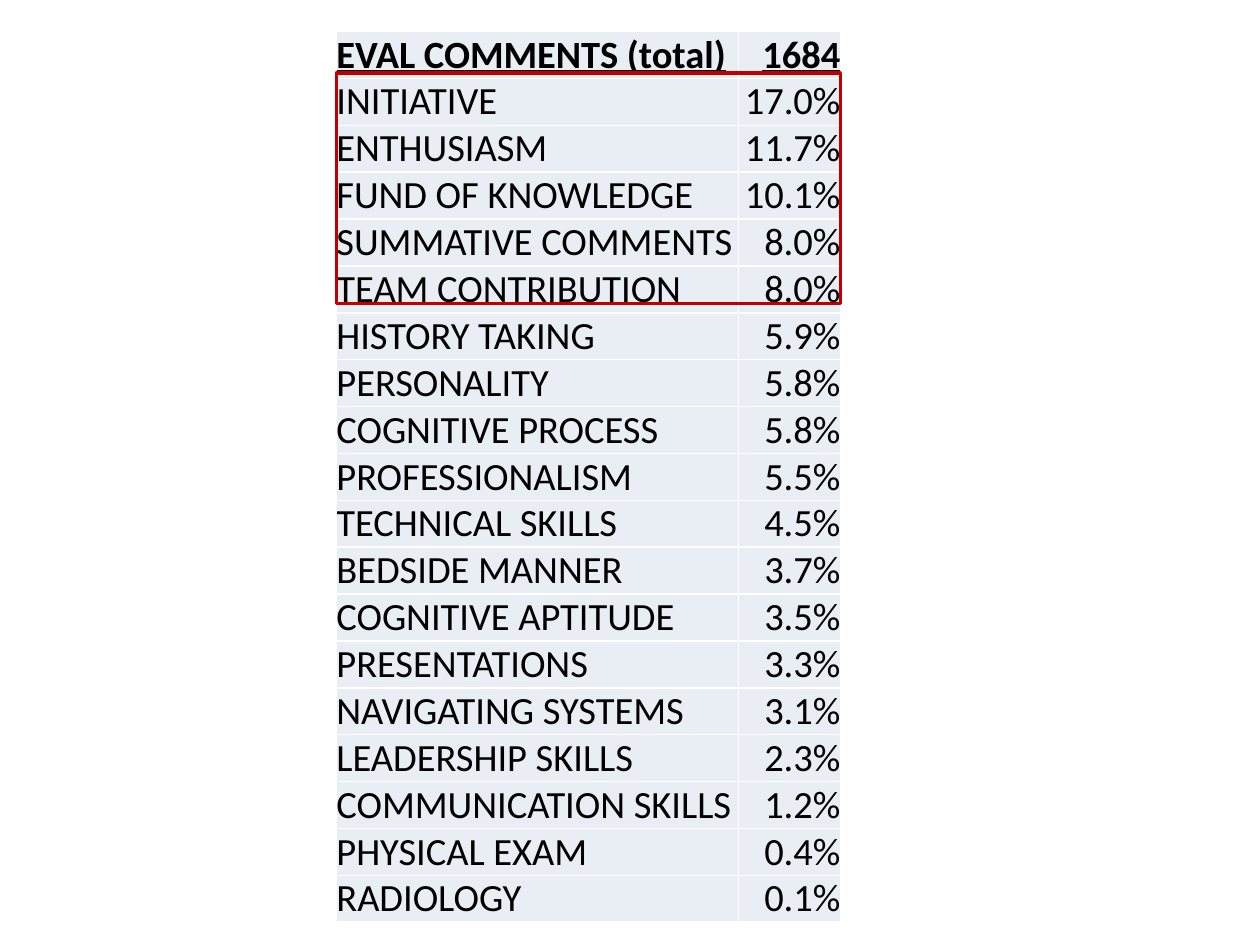
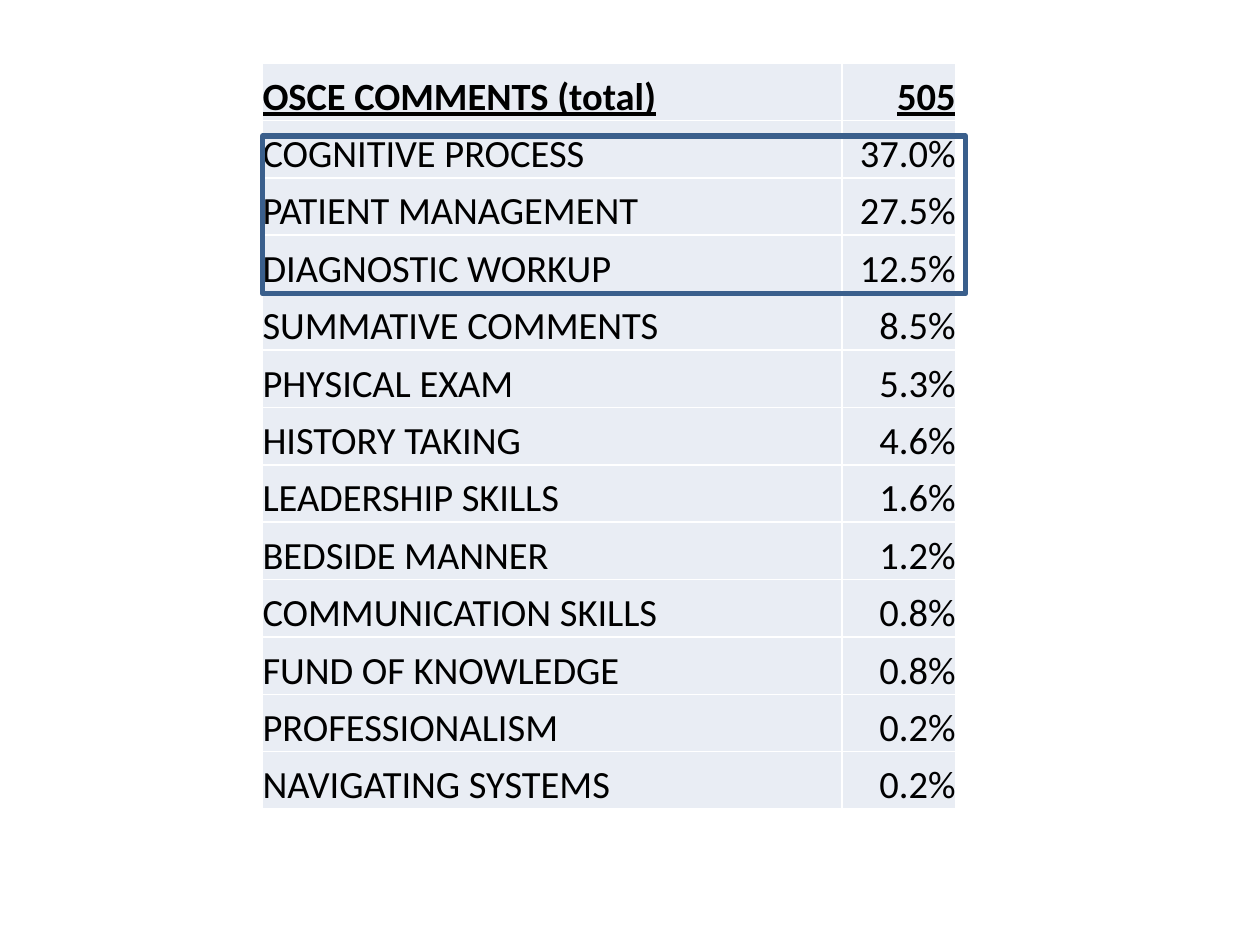
from lxml import etree
from pptx import Presentation
from pptx.dml.color import RGBColor
from pptx.enum.shapes import MSO_SHAPE
from pptx.enum.text import MSO_ANCHOR, PP_ALIGN
from pptx.oxml.ns import qn
from pptx.util import Pt

RECT = MSO_SHAPE.RECTANGLE
BOTTOM = MSO_ANCHOR.BOTTOM
ALIGNS = (PP_ALIGN.LEFT, PP_ALIGN.RIGHT)

HUES = {"page": "FFFFFF", "cell": "E9EDF4", "rule": "FFFFFF",
        "text": "000000", "red": "C00000", "blue": "3A5F8C"}
FONT, SIZE = "Calibri", 22

EVALS = [
    ("EVAL COMMENTS (total)", "1684"),
    ("INITIATIVE", "17.0%"),
    ("ENTHUSIASM", "11.7%"),
    ("FUND OF KNOWLEDGE", "10.1%"),
    ("SUMMATIVE COMMENTS", "8.0%"),
    ("TEAM CONTRIBUTION", "8.0%"),
    ("HISTORY TAKING", "5.9%"),
    ("PERSONALITY", "5.8%"),
    ("COGNITIVE PROCESS", "5.8%"),
    ("PROFESSIONALISM", "5.5%"),
    ("TECHNICAL SKILLS", "4.5%"),
    ("BEDSIDE MANNER", "3.7%"),
    ("COGNITIVE APTITUDE", "3.5%"),
    ("PRESENTATIONS", "3.3%"),
    ("NAVIGATING SYSTEMS", "3.1%"),
    ("LEADERSHIP SKILLS", "2.3%"),
    ("COMMUNICATION SKILLS", "1.2%"),
    ("PHYSICAL EXAM", "0.4%"),
    ("RADIOLOGY", "0.1%"),
]
OSCES = [
    ("OSCE COMMENTS (total)", "505"),
    ("COGNITIVE PROCESS", "37.0%"),
    ("PATIENT MANAGEMENT", "27.5%"),
    ("DIAGNOSTIC WORKUP", "12.5%"),
    ("SUMMATIVE COMMENTS", "8.5%"),
    ("PHYSICAL EXAM", "5.3%"),
    ("HISTORY TAKING", "4.6%"),
    ("LEADERSHIP SKILLS", "1.6%"),
    ("BEDSIDE MANNER", "1.2%"),
    ("COMMUNICATION SKILLS", "0.8%"),
    ("FUND OF KNOWLEDGE", "0.8%"),
    ("PROFESSIONALISM", "0.2%"),
    ("NAVIGATING SYSTEMS", "0.2%"),
]
SLIDES = [
    {"rows": EVALS, "left": 192.25, "top": 18, "cols": (229.75, 58.25),
     "pitch": 26.4, "frame": (192.25, 41.75, 288, 131.75),
     "hue": "red", "weight": 2},
    {"rows": OSCES, "left": 150, "top": 36, "cols": (331.2, 64.8),
     "pitch": 32.8, "frame": (150, 77.75, 401.75, 90),
     "hue": "blue", "weight": 3},
]


def color(name):
    return RGBColor.from_string(HUES[name])


def add_rules(cell):
    props = cell._tc.get_or_add_tcPr()
    for side in ("lnL", "lnR", "lnT", "lnB"):
        line = etree.SubElement(props, qn(f"a:{side}"), w=str(Pt(1)))
        fill = etree.SubElement(line, qn("a:solidFill"))
        etree.SubElement(fill, qn("a:srgbClr"), val=HUES["rule"])


def fill_cell(cell, text, align, head):
    add_rules(cell)
    cell.fill.solid()
    cell.fill.fore_color.rgb = color("cell")
    cell.margin_left = cell.margin_right = Pt(0)
    cell.margin_top = cell.margin_bottom = Pt(0)
    cell.vertical_anchor = BOTTOM
    para = cell.text_frame.paragraphs[0]
    para.alignment = align
    run = para.add_run()
    run.text = text
    font = run.font
    font.name, font.size = FONT, Pt(SIZE)
    font.bold = font.underline = head
    font.color.rgb = color("text")


def add_scores(slide, data):
    rows, cols, pitch = data["rows"], data["cols"], data["pitch"]
    box = (data["left"], data["top"], sum(cols), pitch * len(rows))
    table = slide.shapes.add_table(len(rows), len(cols), *map(Pt, box)).table
    table.first_row = table.horz_banding = False
    for col, width in zip(table.columns, cols):
        col.width = Pt(width)
    for i, row in enumerate(rows):
        table.rows[i].height = Pt(pitch)
        for j, text in enumerate(row):
            fill_cell(table.cell(i, j), text, ALIGNS[j], i == 0)


def add_frame(slide, data):
    frame = slide.shapes.add_shape(RECT, *map(Pt, data["frame"]))
    frame.shadow.inherit = False
    frame.fill.background()
    frame.line.color.rgb = color(data["hue"])
    frame.line.width = Pt(data["weight"])


def main():
    deck = Presentation()
    deck.slide_width, deck.slide_height = Pt(720), Pt(540)
    for data in SLIDES:
        slide = deck.slides.add_slide(deck.slide_layouts[6])
        back = slide.background.fill
        back.solid()
        back.fore_color.rgb = color("page")
        add_scores(slide, data)
        add_frame(slide, data)
    deck.save("out.pptx")


if __name__ == "__main__":
    main()
